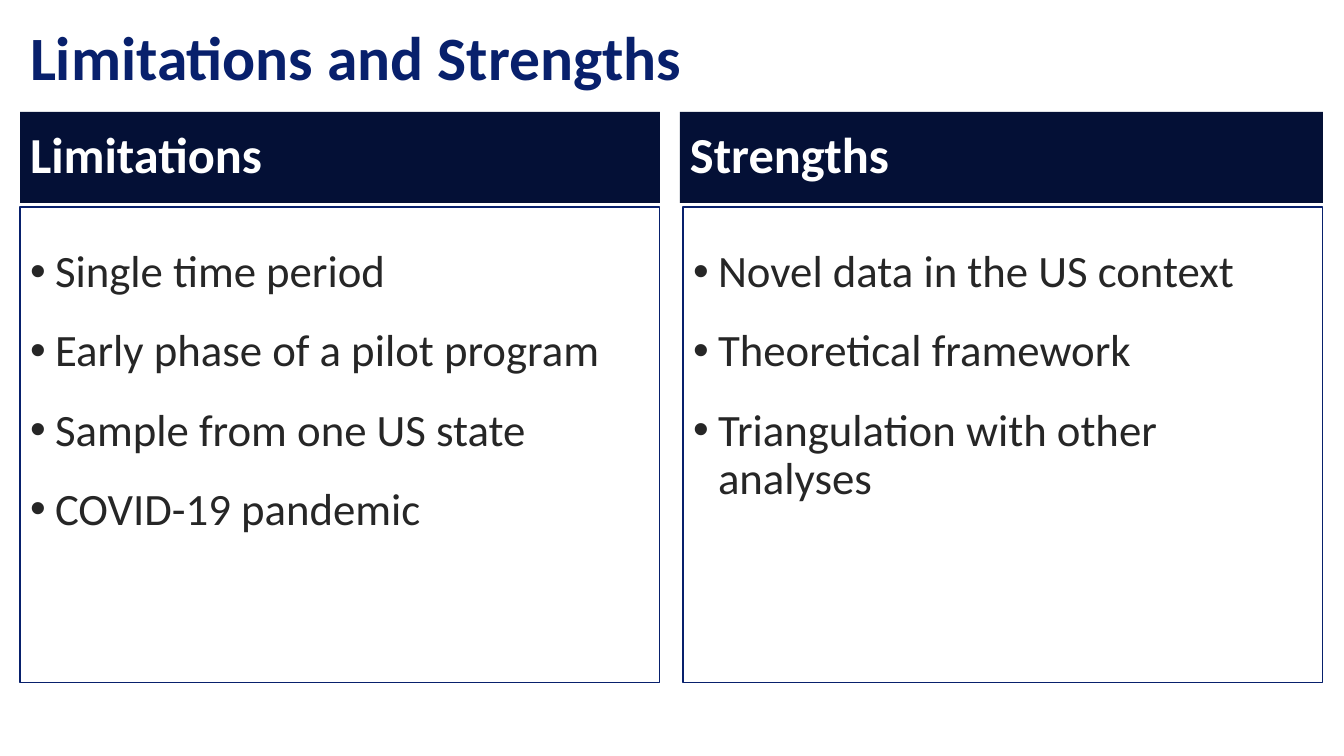
import pptx
import pptx.dml.color
import pptx.enum.text
import pptx.oxml.ns
import pptx.util
from lxml import etree

RGBColor = pptx.dml.color.RGBColor
MSO_ANCHOR = pptx.enum.text.MSO_ANCHOR
Pt = pptx.util.Pt

HEADING = "Limitations and Strengths"
COLUMNS = [
    {
        "name": "Limitations",
        "points": [
            "Single time period",
            "Early phase of a pilot program",
            "Sample from one US state",
            "COVID-19 pandemic",
        ],
        "name_left": 20,
        "points_left": 20,
    },
    {
        "name": "Strengths",
        "points": [
            "Novel data in the US context",
            "Theoretical framework",
            "Triangulation with other analyses",
        ],
        "name_left": 680,
        "points_left": 683,
    },
]

NAVY = RGBColor(0x08, 0x20, 0x6C)
MIDNIGHT = RGBColor(0x04, 0x10, 0x36)
WHITE = RGBColor(0xFF, 0xFF, 0xFF)
CHARCOAL = RGBColor(0x26, 0x26, 0x26)

FONT = "Calibri"
SLIDE_WIDTH, SLIDE_HEIGHT = 1344, 756
COLUMN_WIDTH = 640
HEADING_TOP, NAME_TOP, POINTS_TOP = 15, 112, 207
BAND_HEIGHT, POINTS_HEIGHT = 91, 476
INSET, POINTS_INSET = 10, 42
BULLET_INDENT = 25


def px(length):
    return round(length * 914400 / 100.8)


def fill_text(holder, box, lines, size, color, bold, anchor):
    holder.left, holder.top, holder.width, holder.height = map(px, box)
    frame = holder.text_frame
    frame.text = "\n".join(lines)
    frame.word_wrap = True
    frame.auto_size = pptx.enum.text.MSO_AUTO_SIZE.NONE
    frame.vertical_anchor = anchor
    frame.margin_left = frame.margin_right = px(INSET)
    frame.margin_top = frame.margin_bottom = px(INSET // 2)
    for paragraph in frame.paragraphs:
        paragraph.alignment = pptx.enum.text.PP_ALIGN.LEFT
        paragraph.line_spacing = 0.9
        paragraph.space_before = Pt(0)
        for run in paragraph.runs:
            run.font.name = FONT
            run.font.size = Pt(size)
            run.font.bold = bold
            run.font.color.rgb = color


def add_bullets(frame):
    for position, paragraph in enumerate(frame.paragraphs):
        properties = paragraph._p.get_or_add_pPr()
        properties.set("marL", str(px(BULLET_INDENT)))
        properties.set("indent", str(-px(BULLET_INDENT)))
        etree.SubElement(properties, pptx.oxml.ns.qn("a:buChar"), char="•")
        paragraph.space_before = Pt(10 if position else 0)
        paragraph.space_after = Pt(12)


deck = pptx.Presentation()
deck.slide_width, deck.slide_height = px(SLIDE_WIDTH), px(SLIDE_HEIGHT)
slide = deck.slides.add_slide(deck.slide_layouts.get_by_name("Comparison"))
heading, *bodies = slide.placeholders

heading_box = (20, HEADING_TOP, 1303, BAND_HEIGHT)
fill_text(heading, heading_box, [HEADING], 44, NAVY, True, MSO_ANCHOR.MIDDLE)

for column, name, points in zip(COLUMNS, bodies[::2], bodies[1::2]):
    right = column["points_left"] + COLUMN_WIDTH
    name_box = (column["name_left"], NAME_TOP, right - column["name_left"], BAND_HEIGHT)
    fill_text(name, name_box, [column["name"]], 36, WHITE, True, MSO_ANCHOR.MIDDLE)
    name.fill.solid()
    name.fill.fore_color.rgb = MIDNIGHT

    points_box = (column["points_left"], POINTS_TOP, COLUMN_WIDTH, POINTS_HEIGHT)
    fill_text(points, points_box, column["points"], 32, CHARCOAL, False, MSO_ANCHOR.TOP)
    points.text_frame.margin_top = px(POINTS_INSET)
    points.line.color.rgb = NAVY
    points.line.width = Pt(0.75)
    add_bullets(points.text_frame)

deck.save("out.pptx")
